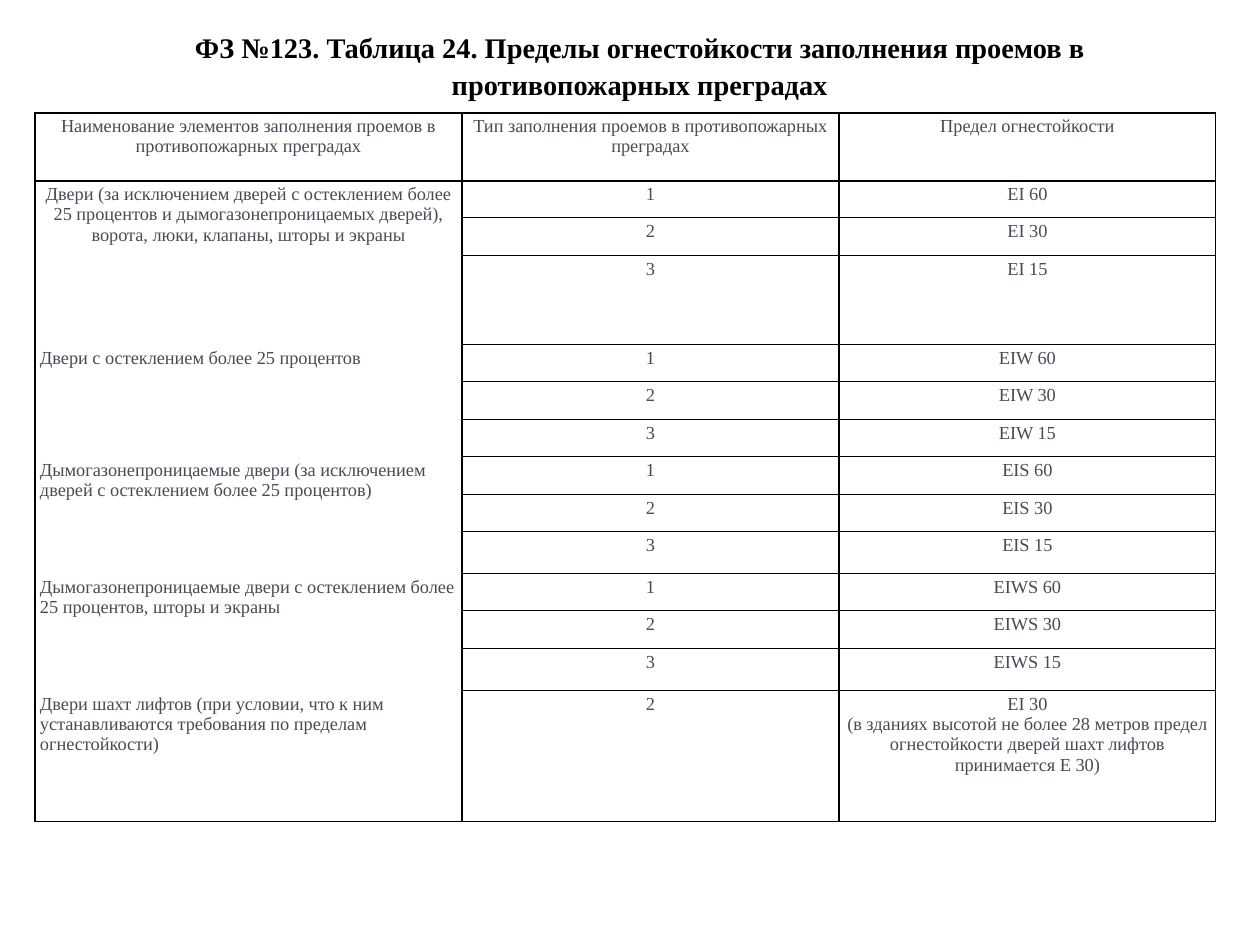
from lxml import etree
from pptx import Presentation
from pptx import util as u
from pptx.dml import color
from pptx.enum import text
from pptx.oxml import ns

PX = 914400 // 126
FONT = "Times New Roman"


def rgb(value):
    return color.RGBColor.from_string(value)


def style_paragraph(para, size, hue, bold, align):
    para.alignment = align
    look = {"name": FONT, "size": u.Pt(size), "bold": bold}
    for span in para.runs:
        for name, value in look.items():
            setattr(span.font, name, value)
        span.font.color.rgb = rgb(hue)


deck = Presentation()
deck.slide_width = 1260 * PX
deck.slide_height = 945 * PX
page = deck.slides.add_slide(deck.slide_layouts[5])

# Title, with its text resting just above the table
title = page.shapes.title
place = {"left": 63, "top": 76, "width": 1153, "height": 59}
for name, value in place.items():
    setattr(title, name, value * PX)
frame = title.text_frame
frame.text = "ФЗ №123. Таблица 24. Пределы огнестойкости заполнения проемов в противопожарных преградах"
frame_format = {
    "word_wrap": True,
    "auto_size": text.MSO_AUTO_SIZE.NONE,
    "vertical_anchor": text.MSO_ANCHOR.BOTTOM,
    "margin_left": 40 * PX,
    "margin_right": 40 * PX,
    "margin_top": 0,
    "margin_bottom": 34 * PX,
}
for name, value in frame_format.items():
    setattr(frame, name, value)
frame.paragraphs[0].line_spacing = 1.08
style_paragraph(frame.paragraphs[0], 16.2, "000000", True, text.PP_ALIGN.CENTER)

# Table contents: each element with its type and limit pairs
header = (
    "Наименование элементов заполнения проемов в противопожарных преградах",
    "Тип заполнения проемов в противопожарных преградах",
    "Предел огнестойкости",
)
three_types = [
    ("Двери (за исключением дверей с остеклением более 25 процентов и дымогазонепроницаемых дверей), "
     "ворота, люки, клапаны, шторы и экраны", "EI"),
    ("Двери с остеклением более 25 процентов", "EIW"),
    ("Дымогазонепроницаемые двери (за исключением дверей с остеклением более 25 процентов)", "EIS"),
    ("Дымогазонепроницаемые двери с остеклением более 25 процентов, шторы и экраны", "EIWS"),
]
groups = [
    (element, [(str(kind), f"{mark} {minutes}") for kind, minutes in enumerate((60, 30, 15), 1)])
    for element, mark in three_types
]
groups.append((
    "Двери шахт лифтов (при условии, что к ним устанавливаются требования по пределам огнестойкости)",
    [("2", "EI 30\n(в зданиях высотой не более 28 метров предел огнестойкости дверей шахт лифтов "
           "принимается Е 30)")],
))

widths = [427, 377, 377]
heights = [68, 37, 38, 89, 37, 38, 37, 38, 37, 42, 37, 38, 42, 131]
last = len(heights) - 1
table = page.shapes.add_table(len(heights), len(widths), 35 * PX, 113 * PX,
                              sum(widths) * PX, sum(heights) * PX).table
table.first_row = table.horz_banding = False
for column, width in zip(table.columns, widths):
    column.width = width * PX
for row, height in zip(table.rows, heights):
    row.height = height * PX

for col, wording in enumerate(header):
    table.cell(0, col).text = wording
top = 1
for element, limits in groups:
    table.cell(top, 0).text = element
    if len(limits) > 1:
        table.cell(top, 0).merge(table.cell(top + len(limits) - 1, 0))
    for row, pair in enumerate(limits, top):
        for col, wording in enumerate(pair, 1):
            table.cell(row, col).text = wording
    top += len(limits)

cell_format = {
    "margin_left": 5 * PX,
    "margin_right": 5 * PX,
    "margin_top": 3 * PX,
    "margin_bottom": 3 * PX,
    "vertical_anchor": text.MSO_ANCHOR.TOP,
}
for row in range(len(heights)):
    for col in range(len(widths)):
        cell = table.cell(row, col)
        for name, value in cell_format.items():
            setattr(cell, name, value)

        # The element column has no rules between its groups
        sides = {"L": True, "R": True, "T": col > 0 or row < 2, "B": col > 0 or row in (0, last)}
        properties = cell._tc.get_or_add_tcPr()
        for side, drawn in sides.items():
            line = etree.SubElement(properties, ns.qn(f"a:ln{side}"), w=str(u.Pt(0.75)))
            if drawn:
                fill = etree.SubElement(line, ns.qn("a:solidFill"))
                etree.SubElement(fill, ns.qn("a:srgbClr"), val="000000")
            else:
                etree.SubElement(line, ns.qn("a:noFill"))
        cell.fill.solid()
        cell.fill.fore_color.rgb = rgb("FFFFFF")

        align = text.PP_ALIGN.LEFT if col == 0 and row > 3 else text.PP_ALIGN.CENTER
        for para in cell.text_frame.paragraphs:
            style_paragraph(para, 10.5, "464C55", False, align)

deck.save("out.pptx")
